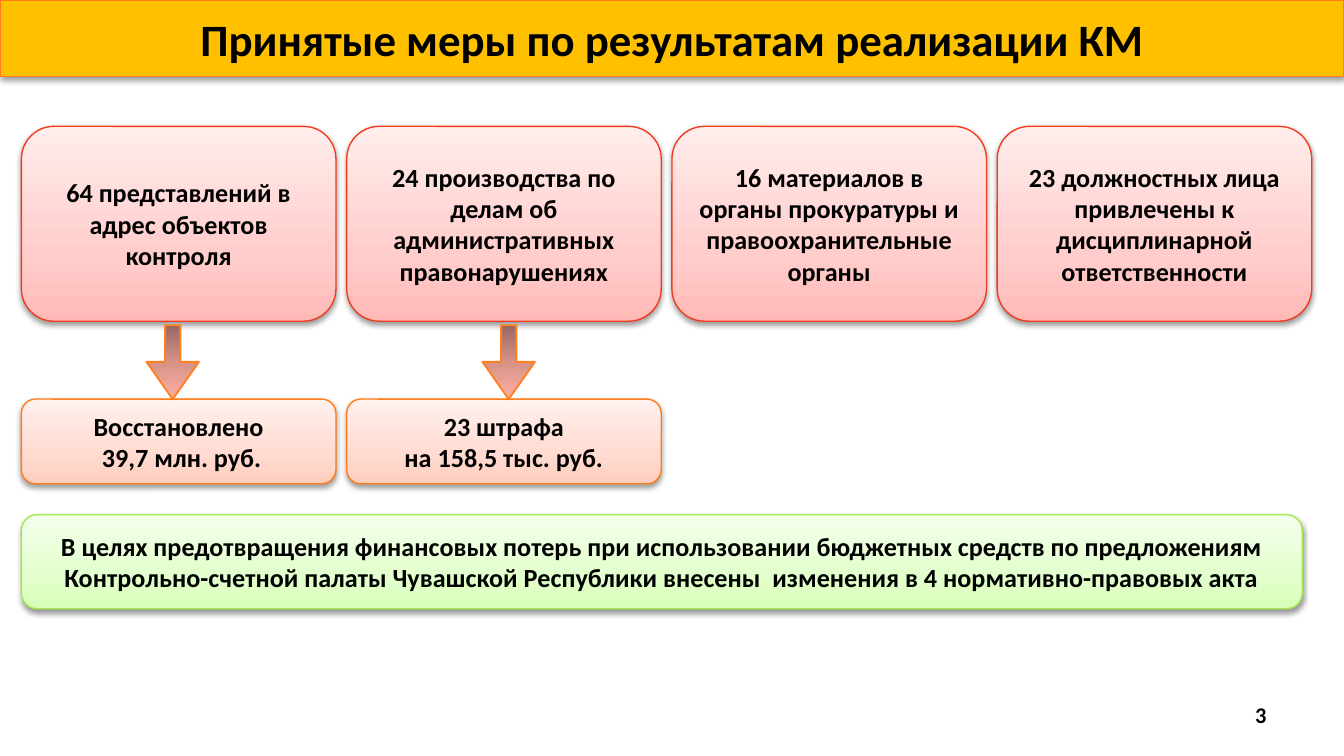
from lxml import etree
from pptx import Presentation
from pptx.dml.color import RGBColor
from pptx.enum import shapes, text
from pptx.oxml import ns, parse_xml
from pptx.util import Inches, Pt

TITLE = "Принятые меры по результатам реализации КМ"
MEASURES = [
    "64 представлений в адрес объектов контроля",
    "24 производства по делам об административных правонарушениях",
    "16 материалов в органы прокуратуры и правоохранительные органы",
    "23 должностных лица привлечены к дисциплинарной ответственности",
]
RESULTS = ["Восстановлено\n 39,7 млн. руб.", "23 штрафа\nна 158,5 тыс. руб."]
SUMMARY = (
    "В целях предотвращения финансовых потерь при использовании бюджетных средств "
    "по предложениям Контрольно-счетной палаты Чувашской Республики внесены  "
    "изменения в 4 нормативно-правовых акта"
)
PAGE_NUMBER = "3"

COLORS = {"text": "000000", "title": "FFC000", "red": "F13C1E", "orange": "FF7C1B",
          "arrow": "FF8021", "green": "A4E94C"}
GRADIENTS = {
    "red": [(0, "FFBAB7"), (35, "FFCECC"), (100, "FFEDEC")],
    "orange": [(0, "FFCDBD"), (35, "FFDBD1"), (100, "FFF1EE")],
    "green": [(0, "D8FFB8"), (35, "E3FFCD"), (100, "F4FFEC")],
    "arrow": [(0, "976760"), (50, "D79388"), (100, "FFAFA2")],
}
LEFT, CARD_WIDTH, CARD_STEP = 0.16, 2.34, 2.42
ARROW_LEFT, ARROW_STEP = 1.09, 2.5


def color(name):
    return RGBColor.from_string(COLORS[name])


def write(shape, content, size=14, align=text.PP_ALIGN.CENTER,
          anchor=text.MSO_ANCHOR.MIDDLE, wrap=True, fit=text.MSO_AUTO_SIZE.NONE):
    frame = shape.text_frame
    frame.word_wrap = wrap
    frame.auto_size = fit
    frame.vertical_anchor = anchor
    frame.text = content
    for para in frame.paragraphs:
        para.alignment = align
        for span in para.runs:
            span.font.name = "Calibri"
            span.font.size = Pt(size)
            span.font.bold = True
            span.font.color.rgb = color("text")


def outline(shape, name, width=0.75):
    shape.line.color.rgb = color(name)
    shape.line.width = Pt(width)


def add_gradient(shape, name, angle):
    shape.fill.gradient()
    shape.fill.gradient_angle = angle
    stops = shape.element.spPr.find(".//" + ns.qn("a:gsLst"))
    for stop in list(stops):
        stops.remove(stop)
    for position, value in GRADIENTS[name]:
        stop = etree.SubElement(stops, ns.qn("a:gs"), pos=str(position * 1000))
        etree.SubElement(stop, ns.qn("a:srgbClr"), val=value)


def add_shadow(shape):
    shape.shadow.inherit = False
    effects = shape.element.spPr.find(ns.qn("a:effectLst"))
    effects.append(parse_xml(
        f'<a:outerShdw {ns.nsdecls("a")} blurRad="{Pt(3.1)}" dist="{Pt(1.6)}" '
        'dir="5400000" rotWithShape="0"><a:srgbClr val="000000">'
        '<a:alpha val="38000"/></a:srgbClr></a:outerShdw>'))


def add_card(page, content, name, left, top, width, height):
    card = page.shapes.add_shape(shapes.MSO_SHAPE.ROUNDED_RECTANGLE,
                                 *map(Inches, (left, top, width, height)))
    add_gradient(card, name, 90)
    outline(card, name)
    add_shadow(card)
    write(card, content)


def add_arrow(page, left):
    arrow = page.shapes.add_shape(shapes.MSO_SHAPE.DOWN_ARROW,
                                  *map(Inches, (left, 2.42, 0.39, 0.55)))
    arrow.adjustments[0] = 0.29
    arrow.adjustments[1] = 0.71
    add_gradient(arrow, "arrow", 270)
    outline(arrow, "arrow", 1)
    arrow.shadow.inherit = False


def main():
    deck = Presentation()
    deck.slide_width = Inches(10)
    deck.slide_height = deck.slide_width * 9 // 16
    page = deck.slides.add_slide(deck.slide_layouts[5])

    title = page.shapes.title
    title.left, title.top, title.width, title.height = map(Inches, (0, 0, 10, 0.57))
    title.fill.solid()
    title.fill.fore_color.rgb = color("title")
    outline(title, "orange")
    add_shadow(title)
    write(title, TITLE, size=24)

    for column, measure in enumerate(MEASURES):
        add_card(page, measure, "red", LEFT + column * CARD_STEP, 0.94, CARD_WIDTH, 1.45)
    for column, result in enumerate(RESULTS):
        add_card(page, result, "orange", LEFT + column * CARD_STEP, 2.97, CARD_WIDTH, 0.63)
        add_arrow(page, ARROW_LEFT + column * ARROW_STEP)
    add_card(page, SUMMARY, "green", LEFT, 3.83, 9.53, 0.7)

    number = page.shapes.add_textbox(*map(Inches, (9.24, 5.17, 0.29, 0.3)))
    write(number, PAGE_NUMBER, size=12, align=text.PP_ALIGN.LEFT,
          anchor=text.MSO_ANCHOR.TOP, wrap=False,
          fit=text.MSO_AUTO_SIZE.SHAPE_TO_FIT_TEXT)

    deck.save("out.pptx")


if __name__ == "__main__":
    main()
